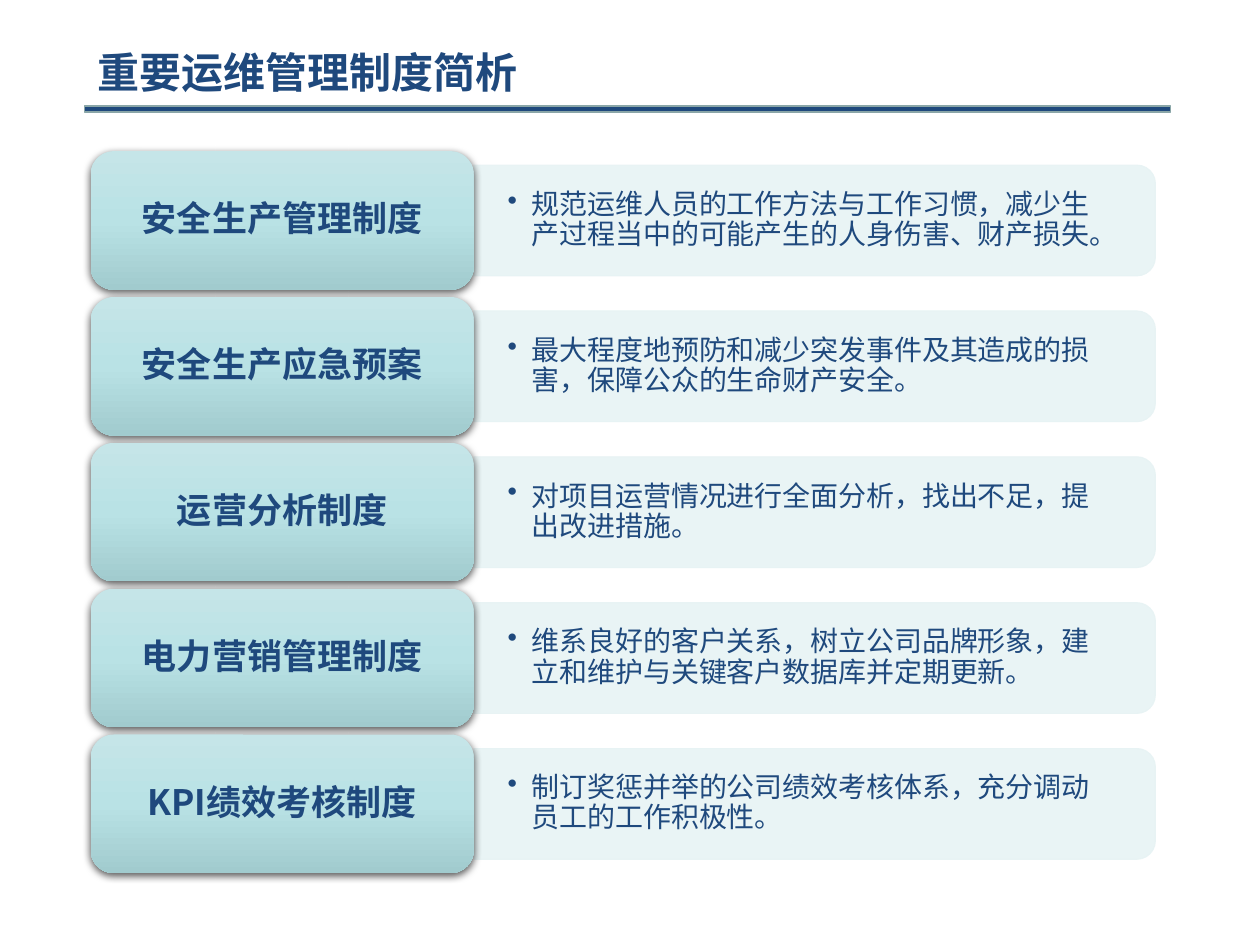
from copy import deepcopy
from dataclasses import dataclass

from lxml.etree import SubElement
from pptx import Presentation
from pptx.dml.color import RGBColor as RGB
from pptx.enum.shapes import MSO_SHAPE as Shape
from pptx.enum.text import MSO_ANCHOR as Anchor, PP_ALIGN as Align
from pptx.oxml.ns import qn
from pptx.util import Inches, Pt


@dataclass(frozen=True)
class Theme:
    ink: str = "1F497D"
    edge: str = "8AA6A8"
    panel: str = "E7F3F4"
    shades: tuple = ("C5E5E8", "B9E2E5", "A1CBCE")
    head: str = "Arial"
    body: str = "Noto Sans CJK SC"
    title: int = 24
    label: int = 20
    note: int = 16


THEME = Theme()
LEFT, SPLIT, RIGHT = 0.72, 3.76, 9.17
TOP, LAST = 1.2, 5.83
CARD_H, PANEL_H = 1.1, 0.88

RULES = [
    ("安全生产管理制度", "规范运维人员的工作方法与工作习惯，减少生产过程当中的可能产生的人身伤害、财产损失。"),
    ("安全生产应急预案", "最大程度地预防和减少突发事件及其造成的损害，保障公众的生命财产安全。"),
    ("运营分析制度", "对项目运营情况进行全面分析，找出不足，提出改进措施。"),
    ("电力营销管理制度", "维系良好的客户关系，树立公司品牌形象，建立和维护与关键客户数据库并定期更新。"),
    ("KPI绩效考核制度", "制订奖惩并举的公司绩效考核体系，充分调动员工的工作积极性。"),
]


def box(*sides):
    return [Inches(side) for side in sides]


def add(tag, parent, **attrs):
    return SubElement(parent, qn(tag), attrs)


def write(shape, text, size, face, bold=False, align=Align.LEFT, pad=(0.1, 0.05), bullet=False):
    """Fill a shape with one paragraph; pad holds the side and the top inset."""
    frame = shape.text_frame
    frame.word_wrap = True
    frame.vertical_anchor = Anchor.MIDDLE
    frame.margin_left = frame.margin_right = Inches(pad[0])
    frame.margin_top = frame.margin_bottom = Inches(pad[1])
    frame.text = text
    para = frame.paragraphs[0]
    para.alignment = align
    para.line_spacing = 0.9
    para.space_before = Pt(0)
    if bullet:
        props = para._p.get_or_add_pPr()
        hang = Inches(0.19)
        props.set("marL", str(hang))
        props.set("indent", str(-hang))
        add("a:buChar", props, char="•")
    for run in para.runs:
        font = run.font
        font.size, font.bold, font.name = Pt(size), bold, face
        font.color.rgb = RGB.from_string(THEME.ink)
        add("a:ea", run._r.get_or_add_rPr(), typeface=THEME.body)


def add_title(slide, text):
    title = slide.shapes.title
    title.left, title.top, title.width, title.height = box(0.67, 0.3, 4.8, 0.59)
    write(title, text, THEME.title, THEME.head, bold=True)
    bar = slide.shapes.add_shape(Shape.RECTANGLE, *box(0.67, 0.84, 8.62, 0.05))
    paint(bar, THEME.ink, THEME.edge, 1)


def paint(shape, fill, line, width):
    shape.shadow.inherit = False
    shape.fill.solid()
    shape.fill.fore_color.rgb = RGB.from_string(fill)
    shape.line.color.rgb = RGB.from_string(line)
    shape.line.width = Pt(width)


def add_panel(slide, mid, text):
    """Add a panel, turned so that its round corners face right, and its text."""
    wide = RIGHT - SPLIT
    panel = slide.shapes.add_shape(
        Shape.ROUND_2_SAME_RECTANGLE,
        *box((SPLIT + RIGHT - PANEL_H) / 2, mid - wide / 2, PANEL_H, wide))
    panel.rotation = 90
    paint(panel, THEME.panel, THEME.panel, 0.5)
    for color in panel._element.spPr.iter(qn("a:srgbClr")):
        add("a:alpha", color, val="90000")
    note = slide.shapes.add_textbox(*box(SPLIT, mid - 0.4, wide - 0.05, 0.8))
    write(note, text, THEME.note, THEME.body, pad=(0.27, 0.14), bullet=True)


def shade(shape):
    shape.fill.gradient()
    first = shape._element.spPr.find(".//" + qn("a:gs"))
    first.addnext(deepcopy(first))
    shape.fill.gradient_angle = 270
    for n, (stop, color) in enumerate(zip(shape.fill.gradient_stops, THEME.shades)):
        stop.position = n / 2
        stop.color.rgb = RGB.from_string(color)


def cast(shape):
    """Give the shape a soft shadow below it."""
    shape.shadow.inherit = False
    effects = shape._element.spPr.find(qn("a:effectLst"))
    outer = add("a:outerShdw", effects, blurRad=str(Pt(4.5)), dist=str(Pt(1.5)),
                dir="5400000", rotWithShape="0")
    add("a:alpha", add("a:srgbClr", outer, val="000000"), val="63000")


def add_card(slide, mid, text):
    card = slide.shapes.add_shape(
        Shape.ROUNDED_RECTANGLE, *box(LEFT, mid - CARD_H / 2, SPLIT - LEFT, CARD_H))
    shade(card)
    card.line.fill.background()
    cast(card)
    write(card, text, THEME.label, THEME.body, bold=True, align=Align.CENTER, pad=(0.08, 0.04))


def main():
    deck = Presentation()
    deck.slide_width, deck.slide_height = box(10, 7.5)
    slide = deck.slides.add_slide(deck.slide_layouts[5])
    add_title(slide, "重要运维管理制度简析")
    step = (LAST - TOP) / (len(RULES) - 1)
    for row, (label, note) in enumerate(RULES):
        mid = TOP + row * step + CARD_H / 2
        add_panel(slide, mid, note)
        add_card(slide, mid, label)
    deck.save("out.pptx")


if __name__ == "__main__":
    main()
